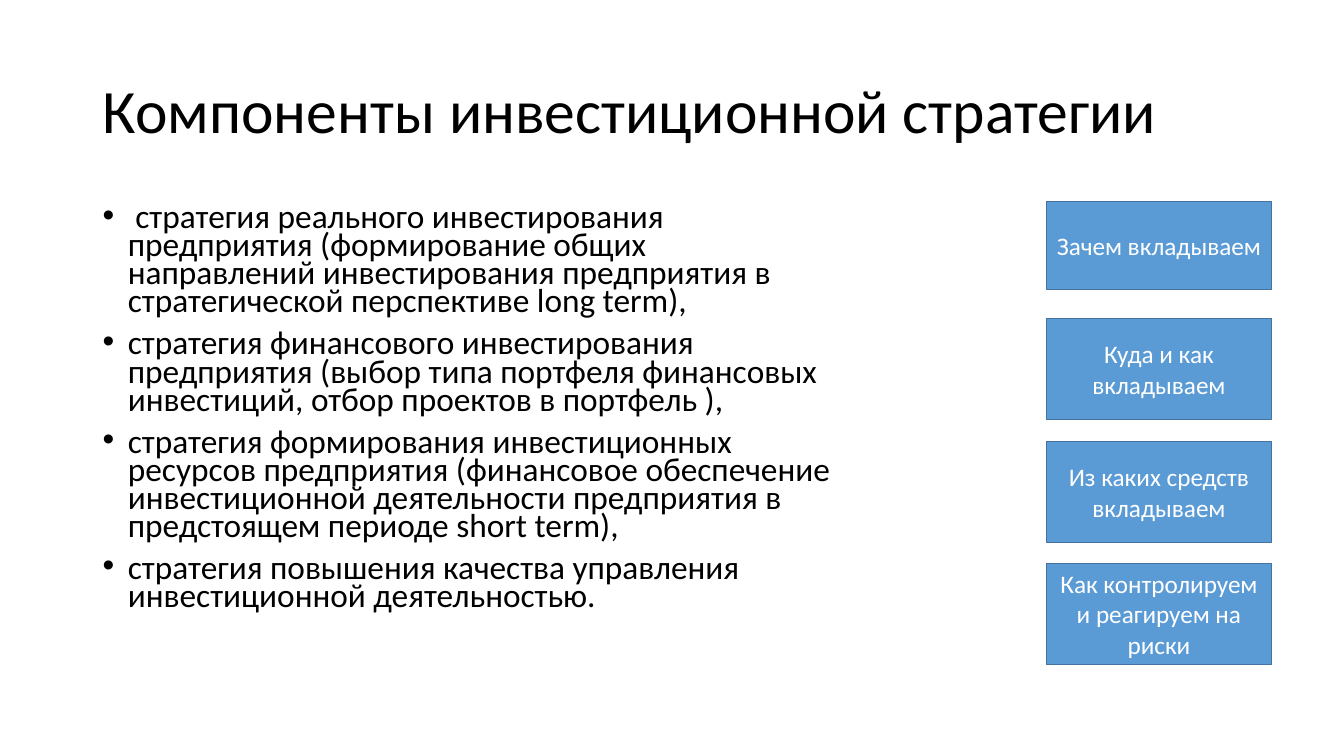
import pptx
import pptx.util
import pptx.dml.color
import pptx.enum.shapes
import pptx.enum.text
import pptx.oxml.ns
import lxml.etree
from dataclasses import dataclass

Inches = pptx.util.Inches
Pt = pptx.util.Pt
PP_ALIGN = pptx.enum.text.PP_ALIGN
MSO_ANCHOR = pptx.enum.text.MSO_ANCHOR


@dataclass(frozen=True)
class Theme:
    font: str = "Calibri"
    text: str = "000000"
    box_fill: str = "5B9BD5"
    box_line: str = "43739E"
    box_text: str = "FFFFFF"
    title_size: float = 44
    body_size: float = 23.8
    box_size: float = 18


TITLE = "Компоненты инвестиционной стратегии"
STRATEGIES = [
    " стратегия реального инвестирования предприятия (формирование общих "
    "направлений инвестирования предприятия в стратегической перспективе long term),",
    "стратегия финансового инвестирования предприятия (выбор типа портфеля "
    "финансовых инвестиций, отбор проектов в портфель ),",
    "стратегия формирования инвестиционных ресурсов предприятия (финансовое "
    "обеспечение инвестиционной деятельности предприятия в предстоящем периоде short term),",
    "стратегия повышения качества управления инвестиционной деятельностью.",
]
# Question, top, height
QUESTIONS = [
    ("Зачем вкладываем", 2, 0.87),
    ("Куда и как вкладываем", 3.16, 1),
    ("Из каких средств вкладываем", 4.38, 1),
    ("Как контролируем и реагируем на риски", 5.59, 1),
]


def rgb(value):
    return pptx.dml.color.RGBColor.from_string(value)


def set_attrs(obj, values):
    for name, value in values.items():
        setattr(obj, name, value)


class SlideBuilder:
    def __init__(self, prs, theme):
        self.theme = theme
        self.slide = prs.slides.add_slide(prs.slide_layouts[6])

    def add_text(self, p, text, size, color, **layout):
        r = p.add_run()
        r.text = text
        set_attrs(p, layout)
        set_attrs(r.font, {"name": self.theme.font, "size": Pt(size)})
        r.font.color.rgb = rgb(color)

    def text_box(self, area, anchor):
        tf = self.slide.shapes.add_textbox(*map(Inches, area)).text_frame
        set_attrs(tf, {"word_wrap": True, "vertical_anchor": anchor})
        return tf

    def title(self, text, area):
        tf = self.text_box(area, MSO_ANCHOR.MIDDLE)
        self.add_text(tf.paragraphs[0], text, self.theme.title_size,
                      self.theme.text, line_spacing=0.9)

    def bullets(self, items, area, indent=0.25):
        tf = self.text_box(area, MSO_ANCHOR.TOP)
        qn = pptx.oxml.ns.qn
        for i, item in enumerate(items):
            p = tf.add_paragraph() if i else tf.paragraphs[0]
            pPr = p._p.get_or_add_pPr()
            pPr.set("marL", str(Inches(indent)))
            pPr.set("indent", str(-Inches(indent)))
            lxml.etree.SubElement(pPr, qn("a:buFont"), typeface="Arial")
            lxml.etree.SubElement(pPr, qn("a:buChar"), char="•")
            self.add_text(p, item, self.theme.body_size, self.theme.text,
                          line_spacing=0.7, space_before=Pt(10 if i else 0))

    def box(self, text, area):
        sp = self.slide.shapes.add_shape(
            pptx.enum.shapes.MSO_SHAPE.RECTANGLE, *map(Inches, area))
        sp.shadow.inherit = False
        sp.fill.solid()
        sp.fill.fore_color.rgb = rgb(self.theme.box_fill)
        sp.line.color.rgb = rgb(self.theme.box_line)
        sp.line.width = Pt(1)
        tf = sp.text_frame
        set_attrs(tf, {"word_wrap": True, "vertical_anchor": MSO_ANCHOR.MIDDLE})
        self.add_text(tf.paragraphs[0], text, self.theme.box_size,
                      self.theme.box_text, alignment=PP_ALIGN.CENTER)


def main():
    prs = pptx.Presentation()
    set_attrs(prs, {"slide_width": Inches(13.33), "slide_height": Inches(7.5)})
    s = SlideBuilder(prs, Theme())
    s.title(TITLE, (0.92, 0.4, 11.5, 1.45))
    s.bullets(STRATEGIES, (0.92, 2, 7.48, 4.76))
    for question, top, height in QUESTIONS:
        s.box(question, (10.38, top, 2.23, height))
    prs.save("out.pptx")


if __name__ == "__main__":
    main()
